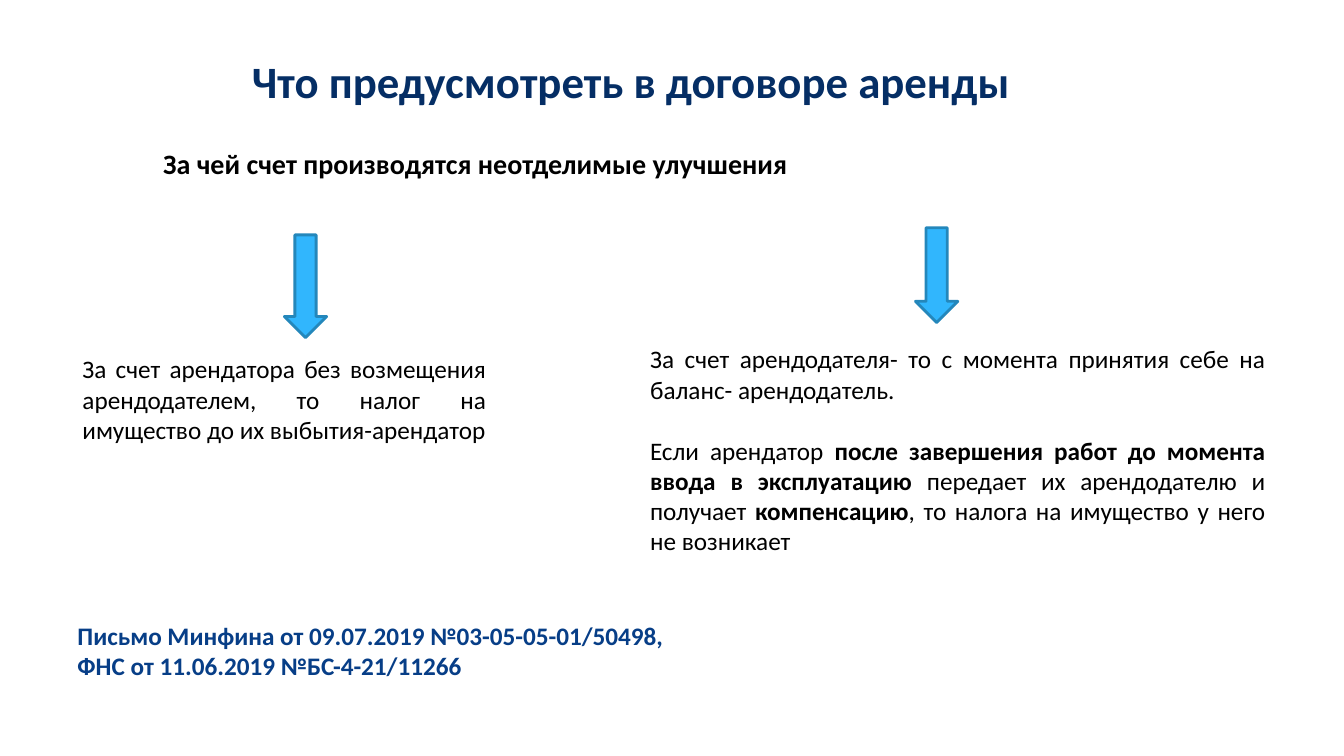
from pptx import Presentation
from pptx.dml.color import RGBColor
from pptx.enum.shapes import MSO_SHAPE
from pptx.enum.text import MSO_ANCHOR, PP_ALIGN
from pptx.util import Inches, Pt


def color(value):
    """Turn a hex string into a colour."""
    return RGBColor.from_string(value)


def write(para, text, font="Calibri", size=18, ink="000000", bold=False):
    """Add one formatted span to a paragraph."""
    span = para.add_run()
    span.text = text
    span.font.name = font
    span.font.size = Pt(size)
    span.font.bold = bold
    span.font.color.rgb = color(ink)


class LeasePage:
    """Hold the style and the current slide."""

    navy, blue, sky, edge = "052E65", "073E87", "31B6FD", "2487BB"

    def __init__(self, deck):
        """Add a title-only slide to the deck."""
        self.page = deck.slides.add_slide(deck.slide_layouts[5])

    def title(self, text, left, top, width, height):
        """Place and fill the title placeholder."""
        box = self.page.shapes.title
        box.left, box.top = Inches(left), Inches(top)
        box.width, box.height = Inches(width), Inches(height)
        box.text_frame.vertical_anchor = MSO_ANCHOR.MIDDLE
        para = box.text_frame.paragraphs[0]
        para.alignment = PP_ALIGN.CENTER
        write(para, text, size=32, ink=self.navy, bold=True)

    def text(self, paragraphs, left, top, width, height,
             align=PP_ALIGN.LEFT, gap=0, **style):
        """Add a text box of paragraphs made of (text, bold) spans."""
        box = self.page.shapes.add_textbox(
            Inches(left), Inches(top), Inches(width), Inches(height))
        frame = box.text_frame
        frame.word_wrap = True
        for index, spans in enumerate(paragraphs):
            para = frame.add_paragraph() if index else frame.paragraphs[0]
            para.alignment = align
            para.space_before = Pt(gap if index else 0)
            for text, bold in spans:
                write(para, text, bold=bold, **style)

    def arrow(self, left, top, height):
        """Add an arrow pointing down."""
        shape = self.page.shapes.add_shape(
            MSO_SHAPE.DOWN_ARROW,
            Inches(left), Inches(top), Inches(0.42), Inches(height))
        shape.shadow.inherit = False
        shape.fill.solid()
        shape.fill.fore_color.rgb = color(self.sky)
        shape.line.color.rgb = color(self.edge)
        shape.line.width = Pt(2)


def main():
    """Build the slide and save it."""
    deck = Presentation()
    deck.slide_width, deck.slide_height = Inches(13.33), Inches(7.5)
    lease = LeasePage(deck)
    lease.title("Что предусмотреть в договоре аренды", 0.26, 0.17, 12, 1.25)
    lease.text([[("За чей счет производятся неотделимые улучшения", True)]],
               1.52, 1.4, 12, 0.44, size=20)
    lease.arrow(2.82, 2.33, 1.02)
    lease.arrow(9.08, 2.26, 0.94)
    lease.text([[("За счет арендатора без возмещения арендодателем, "
                  "то налог на имущество до их выбытия-арендатор", False)]],
               0.72, 3.46, 4.2, 1.31, align=PP_ALIGN.JUSTIFY)
    landlord = [
        [("За счет арендодателя- то с момента принятия себе на "
          "баланс- арендодатель.", False)],
        [("Если арендатор ", False),
         ("после завершения работ до момента ввода в эксплуатацию ", True),
         ("передает их арендодателю и получает ", False),
         ("компенсацию", True),
         (", то налога на имущество у него не возникает", False)],
    ]
    lease.text(landlord, 6.35, 3.36, 6.3, 2.22,
               align=PP_ALIGN.JUSTIFY, gap=22)
    lease.text([[("Письмо Минфина от 09.07.2019 №03-05-05-01/50498,", True)],
                [("ФНС от 11.06.2019 №БС-4-21/11266", True)]],
               0.67, 6.1, 12, 0.71, ink=lease.blue)
    deck.save("out.pptx")


if __name__ == "__main__":
    main()
